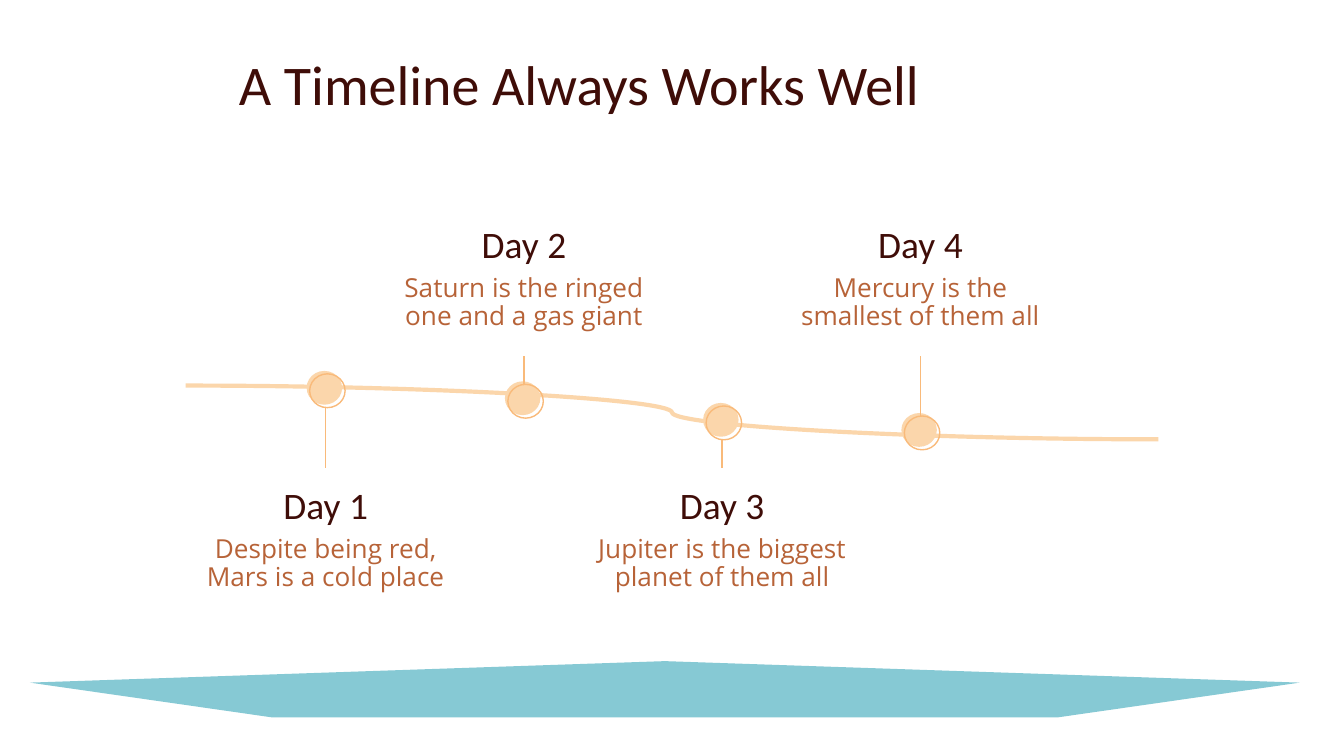
"""Build a four-day timeline slide."""
import pptx
import pptx.dml.color
import pptx.enum.shapes
import pptx.enum.text
import pptx.oxml
import pptx.util

Pt = pptx.util.Pt
RGBColor = pptx.dml.color.RGBColor
SHAPE = pptx.enum.shapes.MSO_SHAPE
CONNECTOR = pptx.enum.shapes.MSO_CONNECTOR
ANCHOR = pptx.enum.text.MSO_ANCHOR

DARK = RGBColor(0x3F, 0x0D, 0x08)
RUST = RGBColor(0xB7, 0x63, 0x38)
PEACH = RGBColor(0xFB, 0xD6, 0xAB)
ORANGE = RGBColor(0xF9, 0xBA, 0x7A)
TEAL = RGBColor(0x86, 0xC9, 0xD4)

prs = pptx.Presentation()
prs.slide_width, prs.slide_height = Pt(720), Pt(405)
s = prs.slides.add_slide(prs.slide_layouts[6])


def add_text(text, *, x, y, w, h, size, color, font="Calibri",
             anchor=ANCHOR.MIDDLE, spacing=1.0):
    sp = s.shapes.add_textbox(Pt(x), Pt(y), Pt(w), Pt(h))
    tf = sp.text_frame
    tf.word_wrap = True
    tf.vertical_anchor = anchor
    tf.margin_left = tf.margin_right = tf.margin_top = tf.margin_bottom = Pt(7.2)
    p = tf.paragraphs[0]
    p.alignment = pptx.enum.text.PP_ALIGN.CENTER
    p.line_spacing = spacing
    r = p.add_run()
    r.text = text
    r.font.name, r.font.size = font, Pt(size)
    r.font.color.rgb = color


def add_line(kind, x1, y1, x2, y2, color, width):
    sp = s.shapes.add_connector(kind, Pt(x1), Pt(y1), Pt(x2), Pt(y2))
    sp.line.color.rgb, sp.line.width = color, Pt(width)
    sp._element.spPr.append(pptx.oxml.parse_xml(
        '<a:effectLst xmlns:a="http://schemas.openxmlformats.org/drawingml/2006/main"/>'))


base = s.shapes.add_shape(SHAPE.REGULAR_PENTAGON, Pt(16), Pt(354.2), Pt(680.4), Pt(30.2))
base.shadow.inherit = False
base.fill.solid()
base.fill.fore_color.rgb = TEAL
base.line.fill.background()

add_text("A Timeline Always Works Well", x=6.5, y=19.4, w=607.7, h=45.4,
         size=30, color=DARK, anchor=ANCHOR.TOP)
add_line(CONNECTOR.CURVE, 99.4, 206.6, 620.6, 235.4, PEACH, 2.25)

days = [
    ("Day 1", "Despite being red, Mars is a cold place", 198.7, False),
    ("Day 2", "Saturn is the ringed one and a gas giant", 204.3, True),
    ("Day 3", "Jupiter is the biggest planet of them all", 215.9, False),
    ("Day 4", "Mercury is the smallest of them all", 221.3, True),
]
for i, (day, fact, top, above) in enumerate(days):
    x = 174.5 + 106.2 * i
    y = 108 if above else 247.7
    add_text(day, x=x - 38.15, y=y, w=76.3, h=45.4, size=20, color=DARK)
    add_text(fact, x=x - 76.7, y=y + 29.6, w=153.4, h=49.7, size=14,
             color=RUST, font="Open Sans", spacing=0.9)

    dot, ring = [s.shapes.add_shape(SHAPE.OVAL, Pt(x - 10.2 + d), Pt(top + d),
                                    Pt(19), Pt(18.1)) for d in (0, 1.6)]
    dot.shadow.inherit = ring.shadow.inherit = False
    dot.fill.solid()
    dot.fill.fore_color.rgb = PEACH
    dot.line.fill.background()
    ring.fill.background()
    ring.line.color.rgb, ring.line.width = ORANGE, Pt(0.75)

    start, end = (top + 2, 190.8) if above else (top + 19.6, 251)
    add_line(CONNECTOR.STRAIGHT, x, start, x, end, ORANGE, 0.75)

prs.save("out.pptx")
